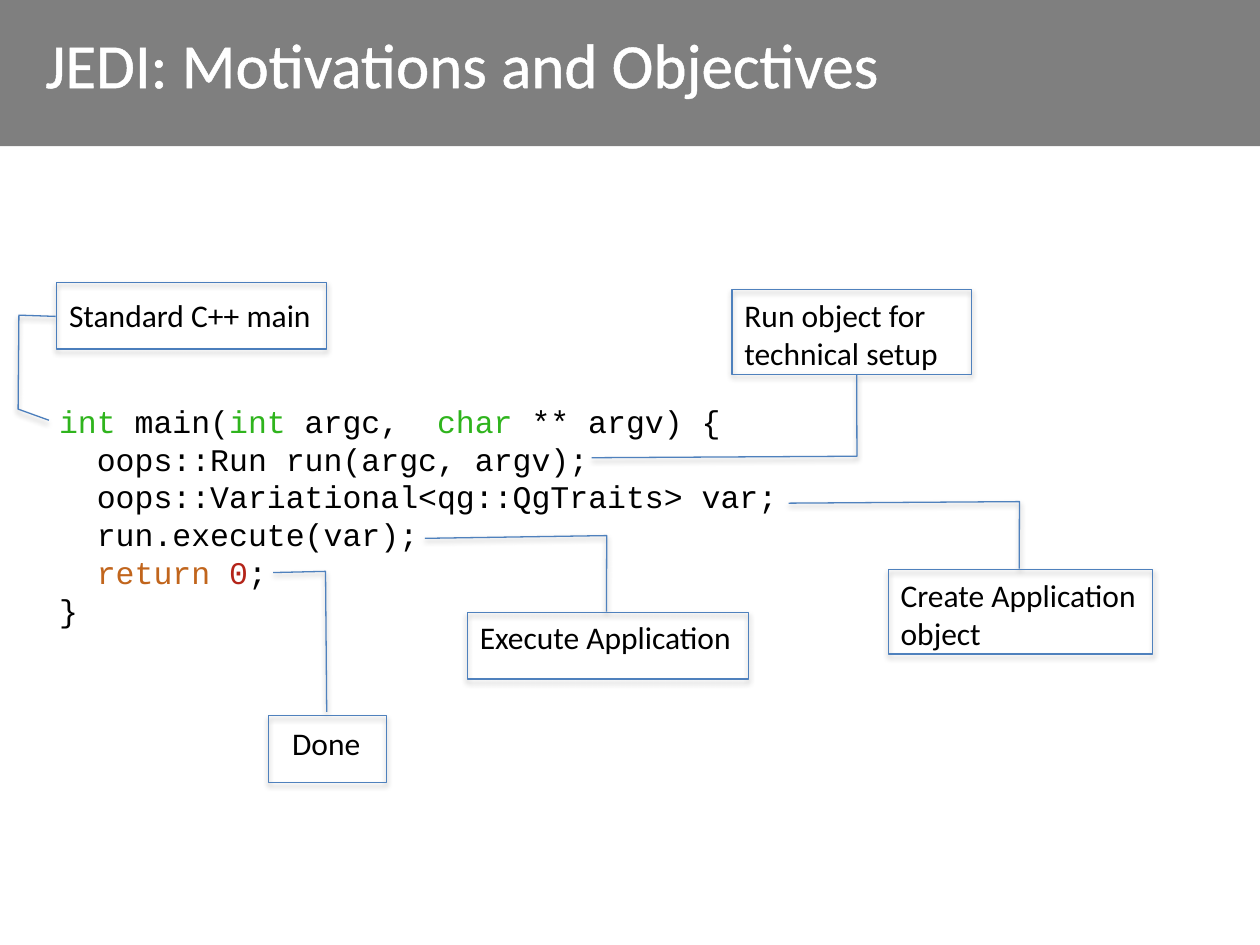
from lxml import etree
from pptx import Presentation
from pptx.dml.color import RGBColor
from pptx.enum import shapes, text
from pptx.oxml import parse_xml
from pptx.oxml.ns import nsdecls, qn
from pptx.util import Inches, Pt

BLACK = RGBColor(0x00, 0x00, 0x00)
WHITE = RGBColor(0xFF, 0xFF, 0xFF)
BLUE = RGBColor(0x4F, 0x81, 0xBD)
DARK_BLUE = RGBColor(0x4B, 0x7E, 0xBC)
GREEN = RGBColor(0x2F, 0xB4, 0x1D)
ORANGE = RGBColor(0xC1, 0x65, 0x1C)
RED = RGBColor(0xB4, 0x24, 0x19)

SOFT_SHADOW = (
    f'<a:effectLst {nsdecls("a")}>'
    '<a:outerShdw blurRad="40000" dist="23000" dir="5400000" rotWithShape="0">'
    '<a:srgbClr val="000000"><a:alpha val="35000"/></a:srgbClr>'
    '</a:outerShdw></a:effectLst>'
)
WHITE_OUTLINE = (
    f'<a:ln {nsdecls("a")} w="18415"><a:solidFill>'
    '<a:srgbClr val="FFFFFF"/></a:solidFill></a:ln>'
)


def write(frame, lines, *, font="Calibri", size=18, color=BLACK, wrap=False,
          anchor=text.MSO_ANCHOR.TOP, fit=text.MSO_AUTO_SIZE.SHAPE_TO_FIT_TEXT):
    """Fill a frame; each line is a string or a list of (words, colour) pairs."""
    frame.word_wrap = wrap
    frame.auto_size = fit
    frame.vertical_anchor = anchor
    for index, line in enumerate(lines):
        paragraph = frame.add_paragraph() if index else frame.paragraphs[0]
        paragraph.alignment = text.PP_ALIGN.LEFT
        parts = [(line, color)] if isinstance(line, str) else line
        for words, part_color in parts:
            run = paragraph.add_run()
            run.text = words
            run.font.name = font
            run.font.size = Pt(size)
            run.font.color.rgb = part_color


prs = Presentation()
prs.slide_width, prs.slide_height = Inches(10), Inches(7.5)
slide = prs.slides.add_slide(prs.slide_layouts[5])

# Header band, half transparent, behind the title
band = slide.shapes.add_shape(
    shapes.MSO_SHAPE.RECTANGLE, 0, 0, Inches(10), Inches(1.16))
band.shadow.inherit = False
band.fill.solid()
band.fill.fore_color.rgb = BLACK
band.line.fill.background()
band_color = band._element.spPr.find(qn("a:solidFill"))[0]
etree.SubElement(band_color, qn("a:alpha")).set("val", "50000")
slide.shapes._spTree.insert(2, band._element)

title = slide.shapes.title
title.left, title.top = Inches(0.26), Inches(0)
title.width, title.height = Inches(8.31), Inches(1)
write(title.text_frame, ["JEDI: Motivations and Objectives"], size=36,
      color=WHITE, wrap=True, anchor=text.MSO_ANCHOR.MIDDLE,
      fit=text.MSO_AUTO_SIZE.NONE)
title_run = title.text_frame.paragraphs[0].runs[0]
title_run.font._element.insert(0, parse_xml(WHITE_OUTLINE))

# Program listing
code = slide.shapes.add_textbox(
    Inches(0.37), Inches(3.14), Inches(5.98), Inches(1.92))
write(code.text_frame, [
    [("int", GREEN), (" main(", BLACK), ("int ", GREEN), ("argc,  ", BLACK),
     ("char", GREEN), (" ** argv) {", BLACK)],
    "  oops::Run run(argc, argv);",
    "  oops::Variational<qg::QgTraits> var;",
    "  run.execute(var);",
    [("  ", BLACK), ("return ", ORANGE), ("0", RED), (";", BLACK)],
    "}",
], font="Courier New")

# Callouts: frame box, label box, label lines, leader points as (y, x) fractions
TWO_BENDS = shapes.MSO_SHAPE.LINE_CALLOUT_3
ONE_BEND = shapes.MSO_SHAPE.LINE_CALLOUT_2
callouts = [
    (TWO_BENDS, DARK_BLUE, (0.45, 2.24, 2.14, 0.53), (0.45, 2.3, 2.14, 0.4),
     ["Standard C++ main"],
     (0.512, -0.004, 0.494, -0.14, 1.901, -0.143, 2.067, -0.029)),
    (ONE_BEND, BLUE, (5.81, 2.3, 1.9, 0.67), (5.81, 2.3, 1.9, 0.71),
     ["Run object for", "technical setup"],
     (0.999, 0.521, 1.972, 0.522, 1.99, -0.586)),
    (ONE_BEND, BLUE, (7.05, 4.52, 2.1, 0.67), (7.05, 4.52, 2.1, 0.71),
     ["Create Application", "object"],
     (-0.011, 0.495, -0.804, 0.496, -0.786, -0.377)),
    (ONE_BEND, BLUE, (3.71, 4.86, 2.23, 0.53), (3.71, 4.86, 2.23, 0.4),
     ["Execute Application"],
     (-0.011, 0.495, -1.149, 0.496, -1.108, -0.151)),
    (ONE_BEND, BLUE, (2.13, 5.68, 0.94, 0.53), (2.22, 5.7, 0.75, 0.4),
     ["Done"],
     (-0.057, 0.493, -2.161, 0.483, -2.143, 0.041)),
]
for preset, line_color, frame_box, label_box, label_lines, leader in callouts:
    group = slide.shapes.add_group_shape()
    callout = group.shapes.add_shape(preset, *map(Inches, frame_box))
    for index, fraction in enumerate(leader):
        callout.adjustments[index] = fraction
    callout.fill.background()
    callout.line.color.rgb = line_color
    callout.line.width = Pt(0.75)
    callout._element.spPr.append(parse_xml(SOFT_SHADOW))
    label = group.shapes.add_textbox(*map(Inches, label_box))
    write(label.text_frame, label_lines)

prs.save("out.pptx")
